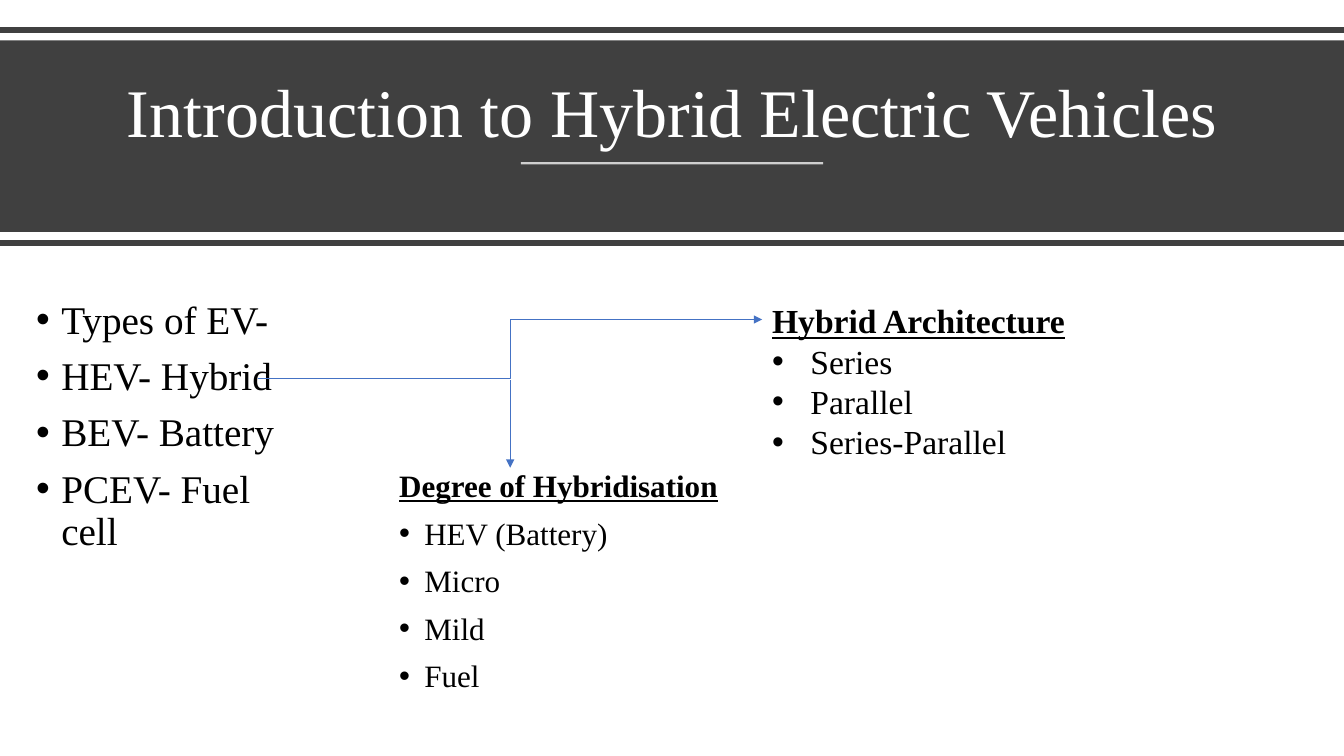
from lxml import etree
from pptx import Presentation
from pptx.dml.color import RGBColor
from pptx.enum import shapes, text
from pptx.oxml import ns
from pptx.util import Inches, Pt

CHARCOAL = RGBColor(0x40, 0x40, 0x40)
WHITE = RGBColor(0xFF, 0xFF, 0xFF)
BLACK = RGBColor(0x00, 0x00, 0x00)
BLUE = RGBColor(0x44, 0x72, 0xC4)
FONT = "Times New Roman"
STRAIGHT = shapes.MSO_CONNECTOR.STRAIGHT
ELBOW = shapes.MSO_CONNECTOR.ELBOW


def add_line(slide, start, end, color, width, kind=STRAIGHT, arrow=False, opacity=None):
    """Draw a connector between two points given in inches."""
    points = [Inches(value) for value in (*start, *end)]
    connector = slide.shapes.add_connector(kind, *points)
    connector.line.color.rgb = color
    connector.line.width = Pt(width)
    outline = connector.line._get_or_add_ln()
    if opacity:
        color_element = outline.find(".//" + ns.qn("a:srgbClr"))
        etree.SubElement(color_element, ns.qn("a:alpha"), val=str(opacity * 1000))
    if arrow:
        etree.SubElement(outline, ns.qn("a:tailEnd"), type="triangle")
    etree.SubElement(connector._element.spPr, ns.qn("a:effectLst"))


def add_text_frame(slide, left, top, width, height):
    """Add a wrapping text box and return its text frame."""
    box = slide.shapes.add_textbox(*map(Inches, (left, top, width, height)))
    box.text_frame.word_wrap = True
    return box.text_frame


def style_font(paragraph, size, color):
    """Set the font, size and colour of a paragraph."""
    paragraph.font.name = FONT
    paragraph.font.size = Pt(size)
    paragraph.font.color.rgb = color


def add_bullet(paragraph, indent):
    """Give a paragraph a hanging round bullet."""
    properties = paragraph._p.get_or_add_pPr()
    properties.set("marL", str(Inches(indent)))
    properties.set("indent", str(-Inches(indent)))
    etree.SubElement(properties, ns.qn("a:buFont"), typeface="Arial")
    etree.SubElement(properties, ns.qn("a:buChar"), char="•")


def add_list(slide, box, items, size, heading=None, indent=0.25, spaced=True):
    """Fill a box with an optional underlined heading and bulleted items."""
    frame = add_text_frame(slide, *box)
    lines = ([heading] if heading else []) + items
    for index, line in enumerate(lines):
        paragraph = frame.add_paragraph() if index else frame.paragraphs[0]
        paragraph.text = line
        if line == heading:
            paragraph.font.bold = True
            paragraph.font.underline = True
        else:
            add_bullet(paragraph, indent)
        style_font(paragraph, size, BLACK)
        if spaced:
            paragraph.line_spacing = 0.9
            paragraph.space_before = Pt(10)


def add_title_band(slide, left, top, width, height):
    """Draw the dark title band with its border rules, title and underline."""
    right, middle = left + width, left + width / 2
    band = slide.shapes.add_shape(
        shapes.MSO_SHAPE.RECTANGLE, *map(Inches, (left, top, width, height))
    )
    band.shadow.inherit = False
    band.fill.solid()
    band.fill.fore_color.rgb = CHARCOAL
    band.line.fill.background()
    for y in (top - 0.1, top + height + 0.11):
        add_line(slide, (left, y), (right, y), CHARCOAL, 4)

    frame = add_text_frame(slide, left + 0.58, top + 0.14, 12.18, 1.02)
    frame.vertical_anchor = text.MSO_ANCHOR.BOTTOM
    paragraph = frame.paragraphs[0]
    paragraph.text = "Introduction to Hybrid Electric Vehicles"
    paragraph.alignment = text.PP_ALIGN.CENTER
    paragraph.line_spacing = 0.9
    style_font(paragraph, 48.6, WHITE)

    underline = top + 1.22
    add_line(slide, (middle - 1.5, underline), (middle + 1.5, underline), WHITE, 1.5, opacity=75)


def add_vehicle_types(slide, left, top, width, height):
    """Place the three lists and the arrows leading from the hybrid entry."""
    add_list(
        slide,
        (left, top, 2.84, height),
        ["Types of EV-", "HEV- Hybrid", "BEV- Battery", "PCEV- Fuel cell"],
        28,
    )
    add_list(
        slide,
        (left + 3.6, top + 1.69, 3.38, 2.47),
        ["HEV (Battery)", "Micro", "Mild", "Fuel"],
        22.2,
        heading="Degree of Hybridisation",
    )
    add_list(
        slide,
        (left + width - 3.2, top, 3.2, 1.72),
        ["Series", "Parallel", "Series-Parallel"],
        24,
        heading="Hybrid Architecture",
        indent=0.38,
        spaced=False,
    )
    start, fork, end = left + 2.3, left + 4.8, left + 7.3
    add_line(slide, (start, top + 0.82), (end, top + 0.24), BLUE, 0.5, ELBOW, arrow=True)
    add_line(slide, (fork, top + 0.84), (fork, top + 1.71), BLUE, 0.5, arrow=True)


def main():
    """Build and save the slide."""
    presentation = Presentation()
    presentation.slide_width = Inches(13.33)
    presentation.slide_height = Inches(7.5)
    slide = presentation.slides.add_slide(presentation.slide_layouts[6])
    add_title_band(slide, 0, 0.4, 13.33, 1.9)
    add_vehicle_types(slide, 0.26, 2.93, 10.5, 3.83)
    presentation.save("out.pptx")


if __name__ == "__main__":
    main()
